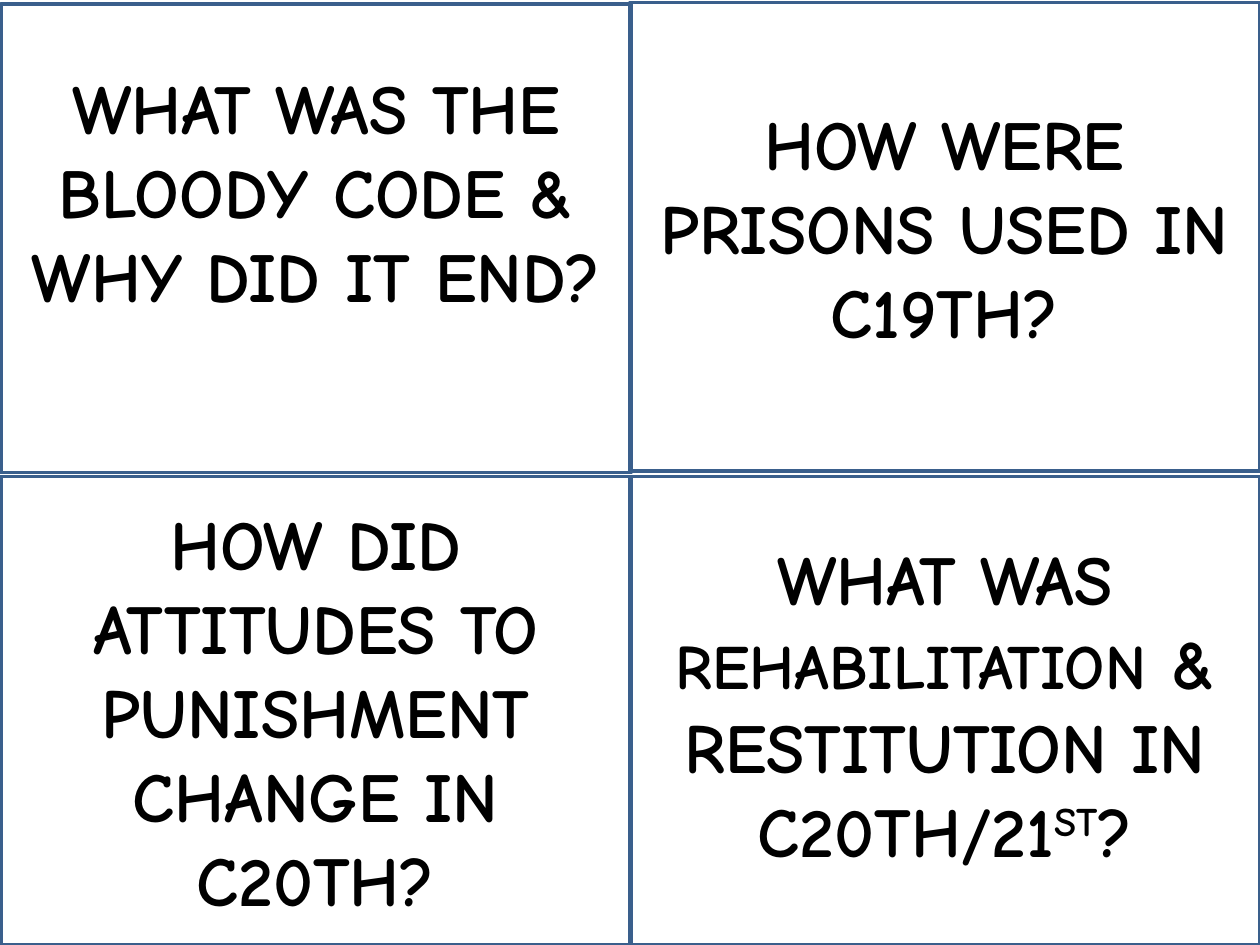
from pptx import Presentation
from pptx.dml.color import RGBColor
from pptx.enum import shapes, text
from pptx.util import Pt

FONT = "Comic Neue"
CARD_WIDTH, CARD_HEIGHT = 360, 267.84
CARD_CORNERS = [(360, 1.44), (360, 272.16), (0.72, 2.16), (0.72, 272.16)]

# Each question: left, top, width, height, then runs of (text, size, superscript)
QUESTIONS = [
    (1.44, 33.12, 358.56, 200.88,
     [("WHAT WAS THE BLOODY CODE & WHY DID IT END?", None, False)]),
    (359.28, 54, 360.72, 152.64,
     [("HOW WERE PRISONS USED IN C19TH?", None, False)]),
    (1.44, 282.24, 357.84, 249.84,
     [("HOW DID ATTITUDES TO PUNISHMENT CHANGE IN C20TH?", None, False)]),
    (359.28, 302.4, 361.44, 200.88,
     [("WHAT WAS ", None, False),
      ("REHABILITATION", 36, False),
      (" & RESTITUTION IN C20TH/21", None, False),
      ("ST", None, True),
      ("?", None, False)]),
]


def color(hex_string):
    return RGBColor.from_string(hex_string)


def add_card(slide, left, top):
    card = slide.shapes.add_shape(
        shapes.MSO_SHAPE.RECTANGLE,
        Pt(left), Pt(top), Pt(CARD_WIDTH), Pt(CARD_HEIGHT))
    card.shadow.inherit = False
    card.fill.background()
    card.line.color.rgb = color("3A5F8C")
    card.line.width = Pt(2)


def add_question(slide, left, top, width, height, runs):
    box = slide.shapes.add_textbox(Pt(left), Pt(top), Pt(width), Pt(height))
    frame = box.text_frame
    frame.word_wrap = True
    frame.auto_size = text.MSO_AUTO_SIZE.SHAPE_TO_FIT_TEXT
    paragraph = frame.paragraphs[0]
    paragraph.alignment = text.PP_ALIGN.CENTER
    paragraph.font.name = FONT
    paragraph.font.size = Pt(40)
    paragraph.font.bold = True
    paragraph.font.color.rgb = color("000000")
    for words, size, superscript in runs:
        run = paragraph.add_run()
        run.text = words
        if size:
            run.font.size = Pt(size)
        if superscript:
            run._r.get_or_add_rPr().set("baseline", "30000")


def main():
    presentation = Presentation()
    presentation.slide_width = Pt(720)
    presentation.slide_height = Pt(540)
    slide = presentation.slides.add_slide(presentation.slide_layouts[6])
    for left, top in CARD_CORNERS:
        add_card(slide, left, top)
    for question in QUESTIONS:
        add_question(slide, *question)
    presentation.save("out.pptx")


if __name__ == "__main__":
    main()
